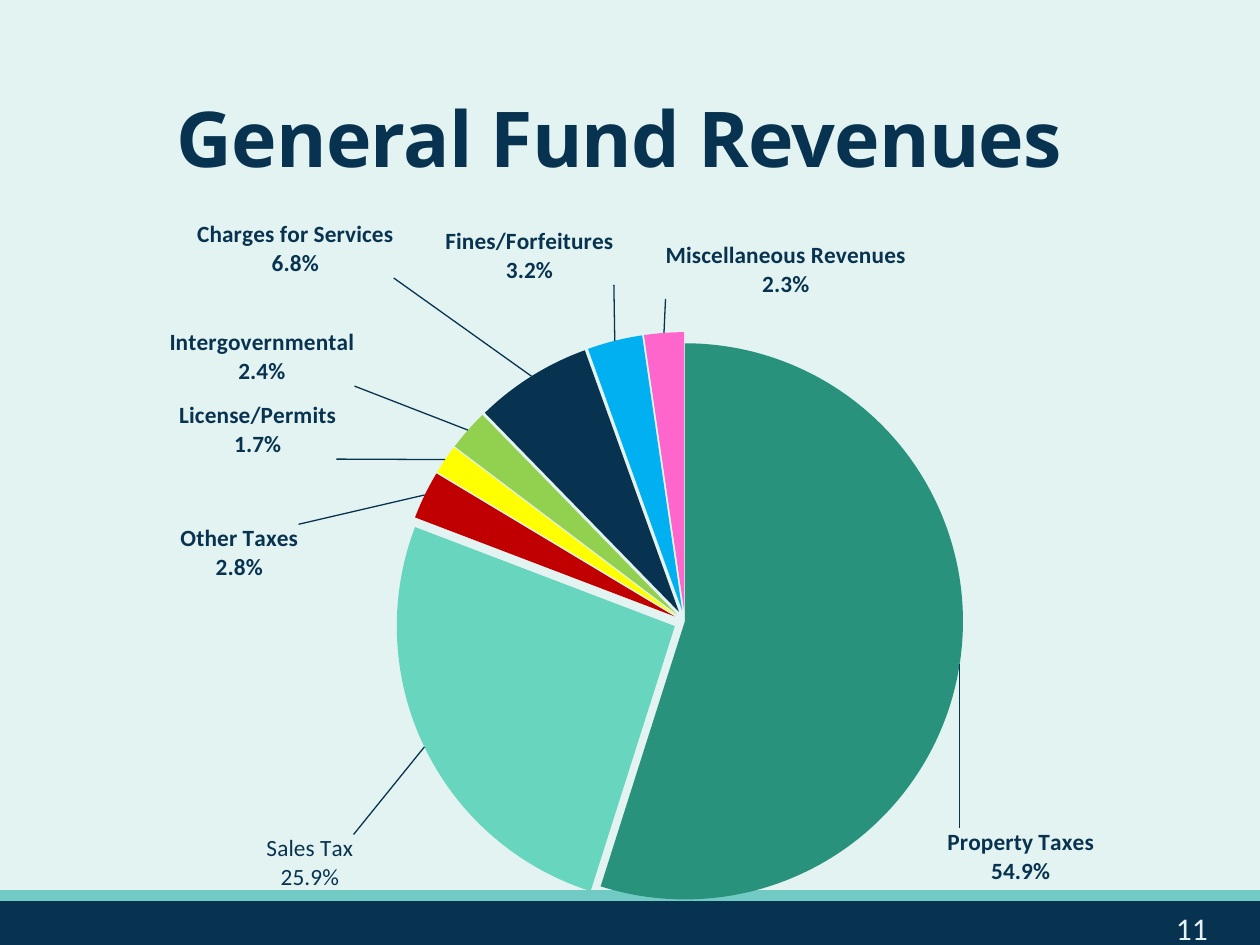
from math import cos, pi, sin

from lxml import etree
from pptx import Presentation
from pptx.chart.data import CategoryChartData
from pptx.dml.color import RGBColor
from pptx.enum.chart import XL_CHART_TYPE
from pptx.enum.shapes import MSO_SHAPE
from pptx.enum.text import MSO_ANCHOR, PP_ALIGN
from pptx.oxml import parse_xml
from pptx.oxml.ns import qn
from pptx.util import Pt

PIE = XL_CHART_TYPE.PIE
RECT = MSO_SHAPE.RECTANGLE
CENTER = PP_ALIGN.CENTER
TOP, BOTTOM = MSO_ANCHOR.TOP, MSO_ANCHOR.BOTTOM
NAMESPACES = ('xmlns:c="http://schemas.openxmlformats.org/drawingml/2006/chart" '
              'xmlns:a="http://schemas.openxmlformats.org/drawingml/2006/main"')

# Content
NAVY, MINT, AQUA = "083350", "E3F3F1", "72CAC4"
TITLE = "General Fund Revenues"
PAGE_NUMBER = "11"
EXPLOSION = 4
# category, percent, colour, explosion, bold label, label corner facing the pie (px)
REVENUES = [
    ("Property Taxes", 54.9, "29927D", 0, 1, (947, 828)),
    ("Sales Tax", 25.9, "68D5BF", EXPLOSION, 0, (354, 834)),
    ("Other Taxes", 2.8, "C00000", EXPLOSION, 1, (299, 582)),
    ("License/Permits", 1.7, "FFFF00", EXPLOSION, 1, (337, 459)),
    ("Intergovernmental", 2.4, "92D050", EXPLOSION, 1, (355, 386)),
    ("Charges for Services", 6.8, NAVY, EXPLOSION, 1, (394, 278)),
    ("Fines/Forfeitures", 3.2, "00B0F0", EXPLOSION, 1, (614, 285)),
    ("Miscellaneous Revenues", 2.3, "FF66CC", EXPLOSION, 1, (786, 299)),
]
FOOTER_BARS = [(901, 44, NAVY), (891, 9, AQUA)]

# Geometry in px
SLIDE_W, SLIDE_H = 1260, 945
CHART_BOX = (26, 209, 1207, 725)
PLOT = {"x": 0.135, "y": 0.17, "w": 0.822, "h": 0.798}
PIE_CENTER = (685, 621)
PIE_RADIUS = 278
LABEL_GAP = 7


def px(length):
    return round(length * 9144000 / SLIDE_W)


def color(hex_code):
    return RGBColor.from_string(hex_code)


def add_text(slide, box, text, font_name, size, hex_code, bold=False, anchor=TOP):
    frame = slide.shapes.add_textbox(*map(px, box)).text_frame
    frame.word_wrap = True
    frame.vertical_anchor = anchor
    paragraph = frame.paragraphs[0]
    paragraph.alignment = CENTER
    run = paragraph.add_run()
    run.text = text
    run.font.name, run.font.size, run.font.bold = font_name, Pt(size), bold
    run.font.color.rgb = color(hex_code)
    return paragraph, run


def label_format(bold):
    """Shared settings of one label or of all labels."""
    return (
        '<c:numFmt formatCode="0.0%" sourceLinked="0"/>'
        '<c:spPr><a:noFill/><a:ln><a:noFill/></a:ln></c:spPr>'
        f'<c:txPr><a:bodyPr/><a:p><a:pPr><a:defRPr sz="1330" b="{bold}">'
        f'<a:solidFill><a:srgbClr val="{NAVY}"/></a:solidFill>'
        '<a:latin typeface="Calibri"/></a:defRPr></a:pPr></a:p></c:txPr>'
        '<c:dLblPos val="outEnd"/><c:showLegendKey val="0"/><c:showVal val="0"/>'
        '<c:showCatName val="1"/><c:showSerName val="0"/><c:showPercent val="1"/>'
        '<c:showBubbleSize val="0"/><c:separator>\n</c:separator>')


def labels_xml():
    """Labels moved from their usual place at the slice edge to their corners."""
    labels, start = "", 0
    total = sum(row[1] for row in REVENUES)
    for index, (_, percent, _, explosion, bold, corner) in enumerate(REVENUES):
        angle = 2 * pi * (start + percent / 2) / total
        start += percent
        reach = PIE_RADIUS * (1 + explosion / 100) + LABEL_GAP
        dx = (corner[0] - PIE_CENTER[0] - reach * sin(angle)) / CHART_BOX[2]
        dy = (corner[1] - PIE_CENTER[1] + reach * cos(angle)) / CHART_BOX[3]
        labels += (f'<c:dLbl><c:idx val="{index}"/><c:layout><c:manualLayout>'
                   f'<c:x val="{dx:.4f}"/><c:y val="{dy:.4f}"/>'
                   f'</c:manualLayout></c:layout>{label_format(bold)}</c:dLbl>')
    return (f'<c:dLbls {NAMESPACES}>{labels}{label_format(1)}'
            '<c:showLeaderLines val="1"/><c:leaderLines><c:spPr><a:ln w="9525">'
            f'<a:solidFill><a:srgbClr val="{NAVY}"/></a:solidFill></a:ln></c:spPr>'
            '</c:leaderLines></c:dLbls>')


def explode_before(element, amount):
    element.addprevious(etree.Element(qn("c:explosion"), val=str(amount)))


def add_revenue_pie(slide):
    data = CategoryChartData(number_format="0.0")
    data.categories = [row[0] for row in REVENUES]
    data.add_series("Series 1", [row[1] for row in REVENUES])
    chart = slide.shapes.add_chart(PIE, *map(px, CHART_BOX), data).chart
    chart.has_legend = False
    chart.has_title = False
    chart.font.name, chart.font.size = "Calibri", Pt(10)
    chart.font.color.rgb = color(NAVY)
    pie = chart.plots[0]
    pie.vary_by_categories = True
    series = pie.series[0]

    # Slices: the series explosion sets the pie's radius, each slice its own pull
    for index, (_, _, hex_code, _, _, _) in enumerate(REVENUES):
        slice_format = series.points[index].format
        slice_format.fill.solid()
        slice_format.fill.fore_color.rgb = color(hex_code)
        slice_format.line.fill.background()
    slices = series._element.findall(qn("c:dPt"))
    explode_before(slices[0], EXPLOSION)
    for point, row in zip(slices, REVENUES):
        explode_before(point.find(qn("c:spPr")), row[3])

    # Labels and plot area
    series._element.find(qn("c:cat")).addprevious(parse_xml(labels_xml()))
    plot_area = chart._chartSpace.chart.plotArea
    for layout in plot_area.findall(qn("c:layout")):
        plot_area.remove(layout)
    sides = "".join(f'<c:{side} val="{part}"/>' for side, part in PLOT.items())
    plot_area.insert(0, parse_xml(
        f'<c:layout {NAMESPACES}><c:manualLayout><c:layoutTarget val="inner"/>'
        f'<c:xMode val="edge"/><c:yMode val="edge"/>{sides}</c:manualLayout></c:layout>'))


def main():
    prs = Presentation()
    prs.slide_width, prs.slide_height = px(SLIDE_W), px(SLIDE_H)
    slide = prs.slides.add_slide(prs.slide_layouts[6])
    slide.background.fill.solid()
    slide.background.fill.fore_color.rgb = color(MINT)

    # Footer bars
    for top, height, hex_code in FOOTER_BARS:
        bar = slide.shapes.add_shape(RECT, 0, px(top), px(SLIDE_W), px(height))
        bar.shadow.inherit = False
        bar.fill.solid()
        bar.fill.fore_color.rgb = color(hex_code)
        bar.line.color.rgb = color(hex_code)
        bar.line.width = Pt(1.25)

    # Title
    heading, title_run = add_text(slide, (84, 21, 1071, 168), TITLE, "Open Sans", 44,
                                  NAVY, bold=True, anchor=BOTTOM)
    heading.line_spacing = 0.85
    title_run.font._element.set("spc", "-50")

    add_revenue_pie(slide)

    # Page number
    add_text(slide, (1124, 903, 136, 50), PAGE_NUMBER, "Calibri", 18, MINT)
    prs.save("out.pptx")


if __name__ == "__main__":
    main()
